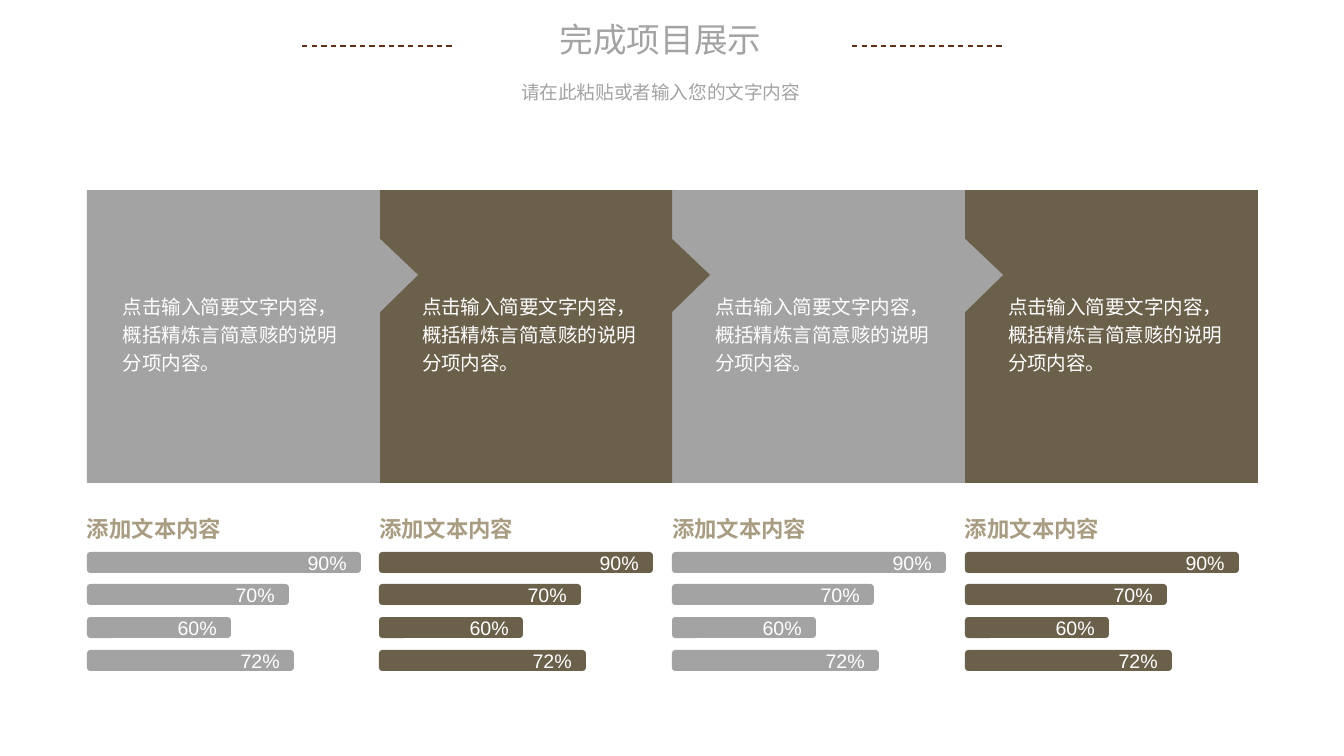
from dataclasses import dataclass

from lxml.etree import SubElement
from pptx import Presentation
from pptx.dml.color import RGBColor
from pptx.enum.dml import MSO_LINE
from pptx.enum.shapes import MSO_CONNECTOR, MSO_SHAPE as Preset
from pptx.enum.text import MSO_ANCHOR as Anchor, MSO_AUTO_SIZE as AutoSize, PP_ALIGN as Align
from pptx.oxml.ns import qn
from pptx.util import Emu, Pt


@dataclass(frozen=True)
class Theme:
    font: str = "Arial"
    gray: str = "A3A3A3"
    brown: str = "6B614B"
    tan: str = "A89C81"
    rule: str = "633017"
    white: str = "FFFFFF"
    title_size: float = 18
    subtitle_size: float = 10
    heading_size: float = 12
    body_size: float = 10.5


THEME = Theme()
EMU_PER_PX = 914400 / 134.4

BAND_LEFT, BAND_WIDTH, COLUMN_COUNT = 87, 1171, 4
PANEL_TOP, PANEL_SIZE = 190, 293
HEADING_TOP, HEADING_HEIGHT = 515, 27
BARS_TOP, BARS_SPAN, BAR_HEIGHT = 552, 98, 21
BARS = [("90%", 274), ("70%", 202), ("60%", 144), ("72%", 207)]

PANEL_TEXT = "点击输入简要文字内容，概括精炼言简意赅的说明分项内容。"
HEADING_TEXT = "添加文本内容"


def px(length):
    return Emu(round(length * EMU_PER_PX))


def box(*lengths):
    return [px(length) for length in lengths]


def write(frame, text, size, color, align=Align.LEFT, spacing=None, bold=False):
    frame.word_wrap = True
    paragraph = frame.paragraphs[0]
    paragraph.alignment = align
    paragraph.line_spacing = spacing
    run = paragraph.add_run()
    run.text = text
    run.font.name = THEME.font
    run.font.size = Pt(size)
    run.font.bold = bold
    run.font.color.rgb = RGBColor.from_string(color)


def set_insets(frame, left, top, right, bottom):
    frame.margin_left, frame.margin_top, frame.margin_right, frame.margin_bottom = box(
        left, top, right, bottom)


def add_title(slide, text):
    title = slide.shapes.title
    title.left, title.top, title.width, title.height = box(512, 12, 297, 54)
    title.text_frame.auto_size = AutoSize.SHAPE_TO_FIT_TEXT
    title.text_frame.vertical_anchor = Anchor.TOP
    write(title.text_frame, text, THEME.title_size, THEME.gray, Align.CENTER)


def add_subtitle(slide, text):
    subtitle = slide.shapes.add_textbox(*box(247, 70, 827, 38))
    write(subtitle.text_frame, text, THEME.subtitle_size, THEME.gray, Align.CENTER, 1.2)


def add_title_rule(slide, left):
    rule = slide.shapes.add_connector(MSO_CONNECTOR.STRAIGHT, *box(left, 46, left + 153, 46))
    rule.line.color.rgb = RGBColor.from_string(THEME.rule)
    rule.line.width = Pt(0.75)
    rule.line.dash_style = MSO_LINE.DASH
    SubElement(rule._element.spPr, qn("a:effectLst"))


def add_block(slide, preset, bounds, color):
    block = slide.shapes.add_shape(preset, *box(*bounds))
    block.shadow.inherit = False
    block.fill.solid()
    block.fill.fore_color.rgb = RGBColor.from_string(color)
    block.line.fill.background()
    block.text_frame.vertical_anchor = Anchor.MIDDLE
    return block


def add_panel(slide, column, left, color):
    """Add a square panel, with a pointer to the next one unless it is the last."""
    is_last = column == COLUMN_COUNT - 1
    preset = Preset.RECTANGLE if is_last else Preset.RECTANGULAR_CALLOUT
    panel = add_block(slide, preset, (left, PANEL_TOP, PANEL_SIZE, PANEL_SIZE), color)
    if not is_last:
        panel.adjustments[0] = 0.63
        panel.adjustments[1] = -0.21
    inset_left, inset_right = (36, 36) if column == 0 else (43, 32)
    set_insets(panel.text_frame, inset_left, 28, inset_right, 36)
    write(panel.text_frame, PANEL_TEXT, THEME.body_size, THEME.white, spacing=1.2)


def add_heading(slide, left):
    heading = slide.shapes.add_textbox(*box(left, HEADING_TOP, PANEL_SIZE, HEADING_HEIGHT))
    set_insets(heading.text_frame, 0, 0, 0, 0)
    heading.text_frame.auto_size = AutoSize.SHAPE_TO_FIT_TEXT
    write(heading.text_frame, HEADING_TEXT, THEME.heading_size, THEME.tan, bold=True)


def add_bars(slide, left, color):
    for row, (label, width) in enumerate(BARS):
        top = BARS_TOP + row * BARS_SPAN // (len(BARS) - 1)
        bar = add_block(slide, Preset.ROUNDED_RECTANGLE, (left, top, width, BAR_HEIGHT), color)
        write(bar.text_frame, label, THEME.body_size, THEME.white, Align.RIGHT)


def main():
    deck = Presentation()
    deck.slide_width, deck.slide_height = box(1344, 756)
    slide = deck.slides.add_slide(deck.slide_layouts.get_by_name("Title Only"))

    add_title(slide, "完成项目展示")
    add_subtitle(slide, "请在此粘贴或者输入您的文字内容")
    for rule_left in (852, 302):
        add_title_rule(slide, rule_left)

    columns = [
        (column, BAND_LEFT + column * BAND_WIDTH // COLUMN_COUNT,
         THEME.brown if column % 2 else THEME.gray)
        for column in range(COLUMN_COUNT)
    ]
    # Right to left, so that each pointer lies over the next panel.
    for column, left, color in reversed(columns):
        add_panel(slide, column, left, color)
    for _, left, color in columns:
        add_bars(slide, left, color)
        add_heading(slide, left)

    deck.save("out.pptx")


if __name__ == "__main__":
    main()
